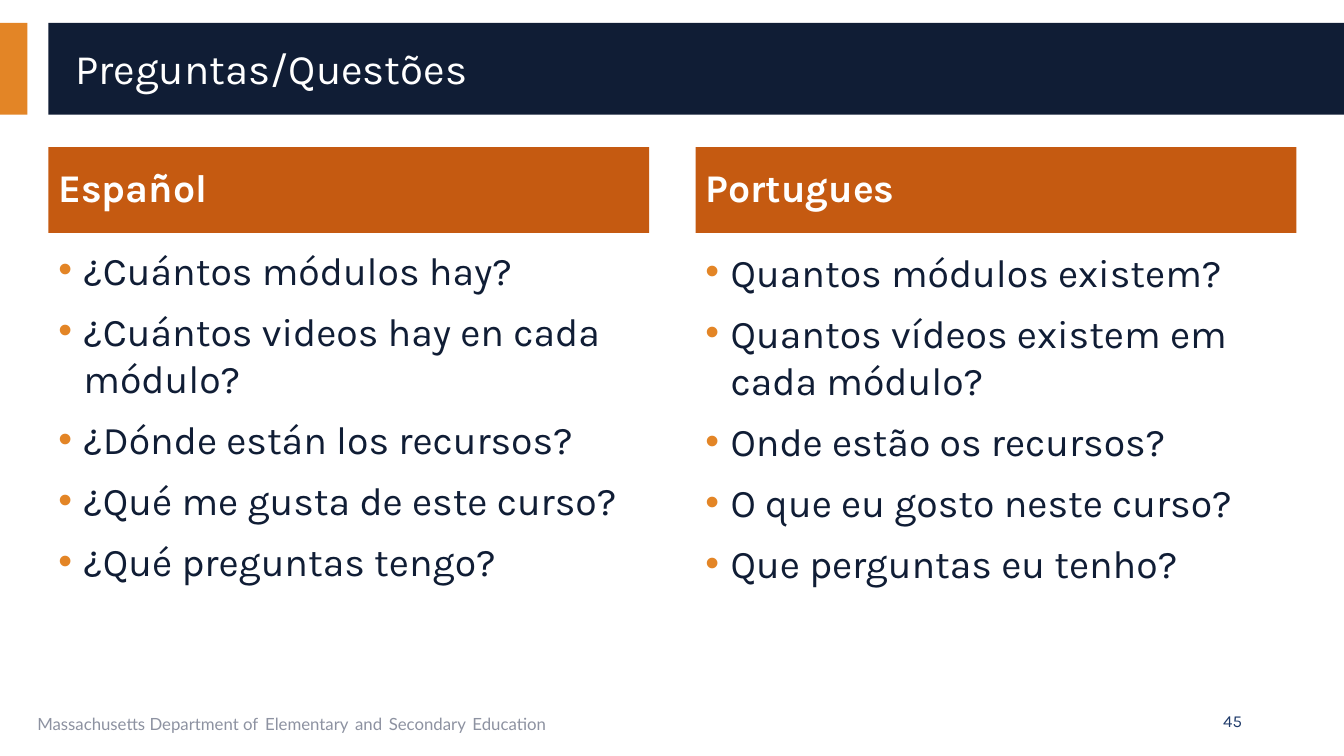
"""Build the bilingual questions slide."""
from dataclasses import dataclass

from lxml import etree
from pptx import Presentation
from pptx import util as u
from pptx.dml.color import RGBColor
from pptx.enum import shapes, text
from pptx.oxml.ns import qn

NAVY, ORANGE, RUST, WHITE = "101D35", "E38526", "C55A11", "FFFFFF"
BLUE, GREY = "203B6A", "8D92A1"
WIDTH, HEIGHT = 33.87, 19.05
LEFT, TOP, BAND_H = 1.22, 0.58, 2.31
COLUMN_W, COLUMN_STEP = 15.14, 16.31


@dataclass
class Box:
    x: float
    y: float
    w: float
    h: float

    def lengths(self) -> list:
        return [u.Cm(v) for v in (self.x, self.y, self.w, self.h)]


@dataclass
class Column:
    heading: str
    questions: list[str]
    list_top: float


COLUMNS = [
    Column("Español", [
        "¿Cuántos módulos hay?",
        "¿Cuántos videos hay en cada módulo?",
        "¿Dónde están los recursos?",
        "¿Qué me gusta de este curso?",
        "¿Qué preguntas tengo?",
    ], 6.07),
    Column("Portugues", [
        "Quantos módulos existem?",
        "Quantos vídeos existem em cada módulo?",
        "Onde estão os recursos?",
        "O que eu gosto neste curso?",
        "Que perguntas eu tenho?",
    ], 6.12),
]
FOOTER = ["Massachusetts Department of", "Elementary", "and", "Secondary", "Education"]


def color(value: str) -> RGBColor:
    return RGBColor.from_string(value)


def style(r, size: float, fill: str, font: str = "Karla", bold: bool = False) -> None:
    r.font.size, r.font.name, r.font.bold = u.Pt(size), font, bold
    r.font.color.rgb = color(fill)


def add_rect(s, box: Box, fill: str):
    sp = s.shapes.add_shape(shapes.MSO_SHAPE.RECTANGLE, *box.lengths())
    sp.shadow.inherit = False
    sp.fill.solid()
    sp.fill.fore_color.rgb = color(fill)
    sp.line.fill.background()
    return sp


def add_text(s, box: Box):
    sp = s.shapes.add_textbox(*box.lengths())
    sp.text_frame.word_wrap = True
    return sp


def write_line(sp, line: str, size: float, fill: str, bold: bool = False,
               align=text.PP_ALIGN.LEFT, spacing: float = 1.0, before: float = 0) -> None:
    tf = sp.text_frame
    tf.text = line
    tf.vertical_anchor = text.MSO_ANCHOR.MIDDLE
    p = tf.paragraphs[0]
    p.alignment, p.line_spacing, p.space_before = align, spacing, u.Pt(before)
    style(p.runs[0], size, fill, bold=bold)


def add_bullet(p) -> None:
    pPr = p._p.get_or_add_pPr()
    indent = u.Cm(0.635)
    pPr.set("marL", str(indent))
    pPr.set("indent", str(-indent))
    buClr = etree.SubElement(pPr, qn("a:buClr"))
    etree.SubElement(buClr, qn("a:srgbClr"), val=ORANGE)
    etree.SubElement(pPr, qn("a:buFont"), typeface="Arial")
    etree.SubElement(pPr, qn("a:buChar"), char="•")


def add_column(s, column: Column, x: float) -> None:
    sp = add_rect(s, Box(x, 3.71, COLUMN_W, 2.16), RUST)
    write_line(sp, column.heading, 28, WHITE, bold=True, spacing=0.9, before=10)
    tf = add_text(s, Box(x, column.list_top, COLUMN_W, 10.54)).text_frame
    tf.text = "\n".join(column.questions)
    for p in tf.paragraphs:
        p.space_before = u.Pt(10)
        style(p.runs[0], 28, NAVY)
        add_bullet(p)


def add_footer(s) -> None:
    p = add_text(s, Box(0.69, 17.65, 21.44, 1.02)).text_frame.paragraphs[0]
    for i, part in enumerate(FOOTER):
        if i:
            r = p.add_run()
            r.text = " "
            style(r, 18, BLUE, "Lato")
        r = p.add_run()
        r.text = part
        style(r, 12, GREY, "Lato")


def main() -> None:
    prs = Presentation()
    prs.slide_width, prs.slide_height = u.Cm(WIDTH), u.Cm(HEIGHT)
    s = prs.slides.add_slide(prs.slide_layouts[6])
    add_rect(s, Box(0, TOP, 0.69, BAND_H), ORANGE)
    add_rect(s, Box(LEFT, TOP, WIDTH - LEFT, BAND_H), NAVY)
    title = add_text(s, Box(1.65, 0.84, 31.75, 1.88))
    write_line(title, "Preguntas/Questões", 30, WHITE, spacing=0.9)
    for i, column in enumerate(COLUMNS):
        add_column(s, column, LEFT + i * COLUMN_STEP)
    add_footer(s)
    number = add_text(s, Box(23.93, 17.65, 7.62, 1.02))
    write_line(number, "45", 12, BLUE, align=text.PP_ALIGN.RIGHT)
    prs.save("out.pptx")


if __name__ == "__main__":
    main()
